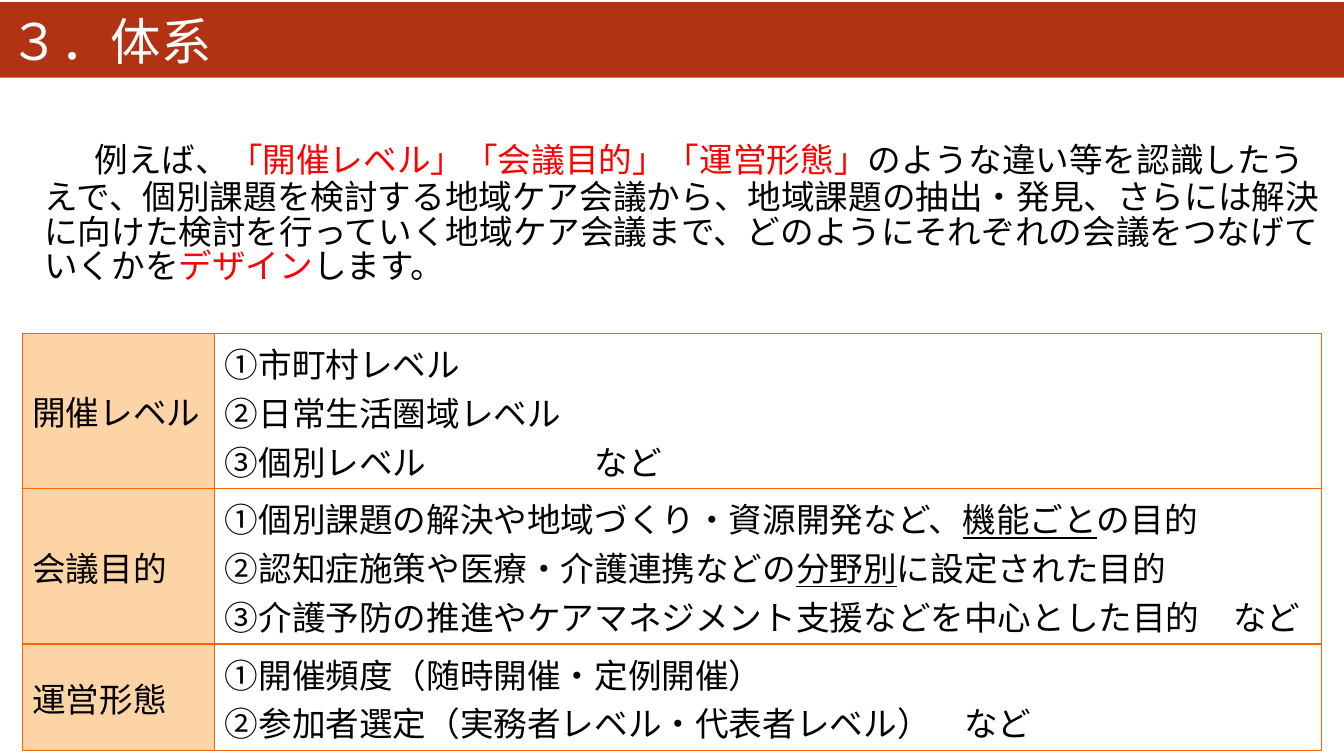
from dataclasses import dataclass

from lxml.etree import SubElement
from pptx import Presentation
from pptx.dml.color import RGBColor
from pptx.enum.shapes import MSO_SHAPE
from pptx.enum.text import MSO_ANCHOR, PP_ALIGN
from pptx.oxml.ns import qn
from pptx.util import Inches, Pt


@dataclass(frozen=True)
class Theme:
    font: str = "Karla"
    rust: str = "B23214"
    red: str = "FF0000"
    black: str = "000000"
    white: str = "FFFFFF"
    peach: str = "FCD4A5"
    edge: str = "FF6600"
    large: int = 36
    text: int = 24


THEME = Theme()

# Each row: label, then lines; a line is a list of runs, True marks underline
ROWS = [
    ("開催レベル", [
        [("①市町村レベル", False)],
        [("②日常生活圏域レベル", False)],
        [("③個別レベル　　　　　など", False)],
    ]),
    ("会議目的", [
        [("①個別課題の解決や地域づくり・資源開発など、", False),
         ("機能ごと", True), ("の目的", False)],
        [("②認知症施策や医療・介護連携などの", False),
         ("分野別", True), ("に設定された目的", False)],
        [("③介護予防の推進やケアマネジメント支援などを中心とした目的　など", False)],
    ]),
    ("運営形態", [
        [("①開催頻度（随時開催・定例開催）", False)],
        [("②参加者選定（実務者レベル・代表者レベル）　など", False)],
    ]),
]


def add_run(para, text, color=THEME.black, size=THEME.text, bold=False, line=False):
    run = para.add_run()
    run.text = text
    font = run.font
    font.name, font.size, font.bold = THEME.font, Pt(size), bold
    font.underline = line
    font.color.rgb = RGBColor.from_string(color)


def add_title(slide, text):
    bar = slide.shapes.add_shape(
        MSO_SHAPE.RECTANGLE, 0, Inches(0.02), Inches(13.33), Inches(0.75))
    bar.shadow.inherit = False
    bar.fill.solid()
    bar.fill.fore_color.rgb = RGBColor.from_string(THEME.rust)
    bar.line.fill.background()
    frame = bar.text_frame
    frame.vertical_anchor = MSO_ANCHOR.MIDDLE
    para = frame.paragraphs[0]
    para.alignment = PP_ALIGN.LEFT
    para.line_spacing = Pt(43.2)
    add_run(para, text, THEME.white, THEME.large)


def add_body(slide, parts):
    box = slide.shapes.add_textbox(
        Inches(0.34), Inches(1.25), Inches(12.86), Inches(6.25))
    frame = box.text_frame
    frame.word_wrap = True
    para = frame.paragraphs[0]
    para.space_before = Pt(10)
    para.line_spacing = 0.85
    # A large wide space indents the opening line
    add_run(para, "　", THEME.rust, THEME.large, bold=True)
    for text, color in parts:
        add_run(para, text, color)


def add_edges(cell):
    props = cell._tc.get_or_add_tcPr()
    for spot, side in enumerate(("a:lnL", "a:lnR", "a:lnT", "a:lnB")):
        edge = props.makeelement(qn(side), {"w": str(Pt(1))})
        fill = SubElement(edge, qn("a:solidFill"))
        SubElement(fill, qn("a:srgbClr")).set("val", THEME.edge)
        props.insert(spot, edge)


def fill_cell(cell, lines, color):
    cell.fill.solid()
    cell.fill.fore_color.rgb = RGBColor.from_string(color)
    cell.vertical_anchor = MSO_ANCHOR.MIDDLE
    add_edges(cell)
    frame = cell.text_frame
    for spot, runs in enumerate(lines):
        para = frame.add_paragraph() if spot else frame.paragraphs[0]
        for text, line in runs:
            add_run(para, text, line=line)


def add_grid(slide, rows):
    grid = slide.shapes.add_table(
        len(rows), 2, Inches(0.22), Inches(3.31), Inches(12.89), Inches(3.5)).table
    grid.first_row = grid.horz_banding = False
    for col, width in zip(grid.columns, (1.91, 10.98)):
        col.width = Inches(width)
    for spot, (label, lines) in enumerate(rows):
        grid.rows[spot].height = Inches(0.1 + 0.48 * len(lines))
        fill_cell(grid.cell(spot, 0), [[(label, False)]], THEME.peach)
        fill_cell(grid.cell(spot, 1), lines, THEME.white)


def main():
    deck = Presentation()
    deck.slide_width, deck.slide_height = Inches(13.33), Inches(7.5)
    slide = deck.slides.add_slide(deck.slide_layouts[6])

    # Opening text
    add_body(slide, [
        ("例えば、", THEME.black),
        ("「開催レベル」「会議目的」「運営形態」", THEME.red),
        ("のような違い等を認識したうえで、個別課題を検討する地域ケア会議から、"
         "地域課題の抽出・発見、さらには解決に向けた検討を行っていく地域ケア会議まで、"
         "どのようにそれぞれの会議をつなげていくかを", THEME.black),
        ("デザイン", THEME.red),
        ("します。", THEME.black),
    ])

    # Table of levels, aims and forms
    add_grid(slide, ROWS)

    # Title bar
    add_title(slide, "３．体系")

    deck.save("out.pptx")


if __name__ == "__main__":
    main()
